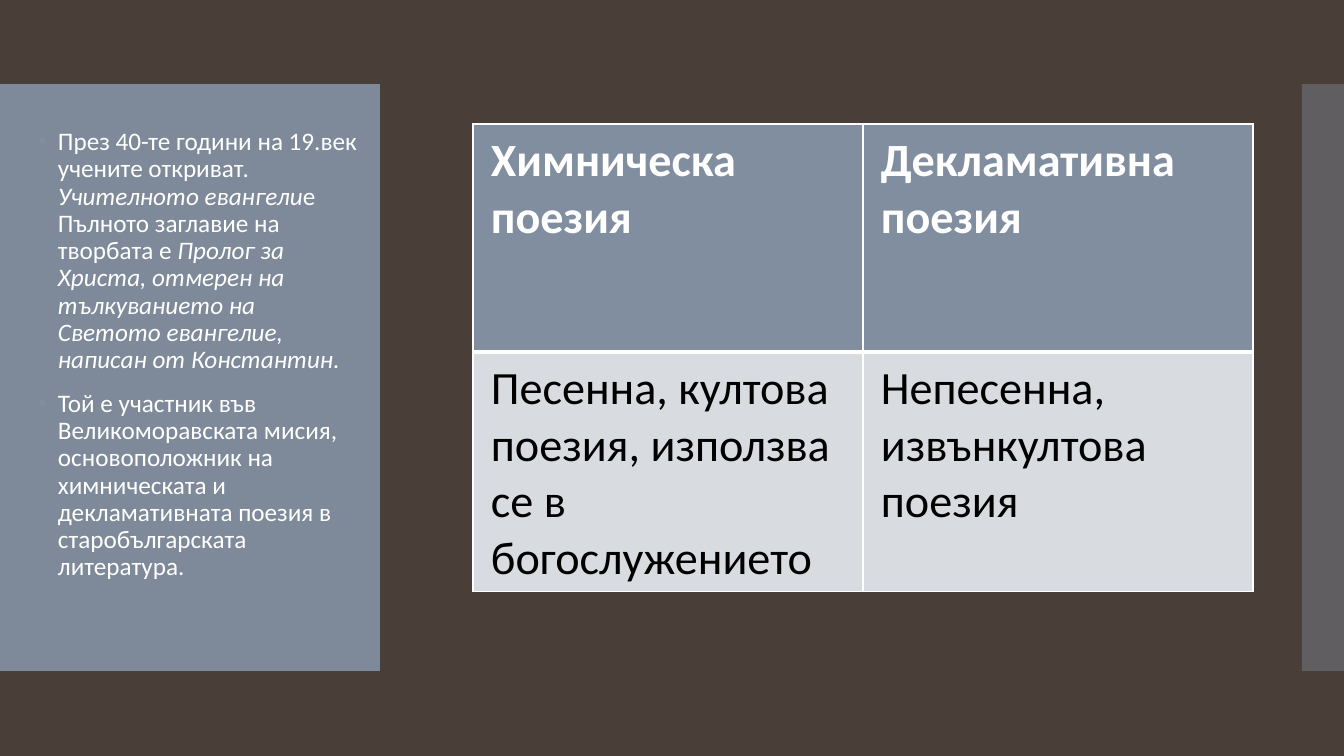
import pptx
import pptx.util
import pptx.dml.color
import pptx.enum.shapes
import pptx.oxml.ns
from lxml import etree

SCALE = 914400 / 100.8
FONT = "Calibri"
SLATE, PALE, WHITE, BLACK, BROWN = "818E9F", "D8DBDF", "FFFFFF", "000000", "4A3F38"
NOTES = [
    [("През 40-те години на 19.век учените откриват. ", False),
     ("Учителното евангели", True),
     ("е Пълното заглавие на творбата е ", False),
     ("Пролог за Христа, отмерен на тълкуванието на Светото евангелие, "
      "написан от Константин.", True)],
    [("Той е участник във Великоморавската мисия, основоположник на химническата "
      "и декламативната поезия в старобългарската литература.", False)],
]
ROWS = [
    ["Химническа поезия", "Декламативна поезия"],
    ["Песенна, култова поезия, използва се в богослужението",
     "Непесенна, извънкултова поезия"],
]


def px(n):
    return pptx.util.Emu(round(n * SCALE))


def place(box):
    return [px(n) for n in box]


def rgb(code):
    return pptx.dml.color.RGBColor.from_string(code)


def sub(node, tag, **attrs):
    return etree.SubElement(node, pptx.oxml.ns.qn(tag), **attrs)


def paint(fill, code):
    fill.solid()
    fill.fore_color.rgb = rgb(code)


def style(para, size, code, bold=False):
    font = para.font
    font.name, font.size, font.bold = FONT, pptx.util.Pt(size), bold
    font.color.rgb = rgb(code)


def add_band(slide, box, alpha):
    band = slide.shapes.add_shape(pptx.enum.shapes.MSO_SHAPE.RECTANGLE, *place(box))
    band.shadow.inherit = False
    band.line.fill.background()
    paint(band.fill, SLATE)
    tint = band.fill._xPr.find(".//" + pptx.oxml.ns.qn("a:srgbClr"))
    sub(tint, "a:alpha", val=str(alpha * 1000))


def add_bullet(para):
    props = para._p.get_or_add_pPr()
    props.set("marL", str(px(20)))
    props.set("indent", str(px(-20)))
    mark = sub(props, "a:buClr")
    sub(mark, "a:srgbClr", val=SLATE)
    sub(props, "a:buFont", typeface="Arial")
    sub(props, "a:buChar", char="•")


def add_notes(slide, box):
    left, top, width, height = box
    add_band(slide, box, 95)
    area = (left + 28, top + 40, width - 35, height - 60)
    frame = slide.shapes.add_textbox(*place(area)).text_frame
    frame.word_wrap = True
    for i, parts in enumerate(NOTES):
        para = frame.add_paragraph() if i else frame.paragraphs[0]
        para.line_spacing = 0.9
        para.space_before = pptx.util.Pt(12)
        add_bullet(para)
        style(para, 18, WHITE)
        for text, slant in parts:
            run = para.add_run()
            run.text = text
            run.font.italic = slant


def add_edge(cell, tag, points):
    edge = sub(cell._tc.get_or_add_tcPr(), tag, w=str(pptx.util.Pt(points)))
    sub(sub(edge, "a:solidFill"), "a:srgbClr", val=WHITE)


def add_grid(slide, box):
    rows, cols = len(ROWS), len(ROWS[0])
    table = slide.shapes.add_table(rows, cols, *place(box)).table
    for r, texts in enumerate(ROWS):
        head = r == 0
        for c, text in enumerate(texts):
            cell = table.cell(r, c)
            cell.text = text
            cell.margin_left = cell.margin_right = px(18)
            cell.margin_top = cell.margin_bottom = px(9)
            style(cell.text_frame.paragraphs[0], 33, WHITE if head else BLACK, head)
            add_edge(cell, "a:lnL", 1)
            add_edge(cell, "a:lnR", 1)
            add_edge(cell, "a:lnT", 1 if head else 3)
            add_edge(cell, "a:lnB", 3 if head else 1)
            paint(cell.fill, SLATE if head else PALE)


def main():
    deck = pptx.Presentation()
    deck.slide_width, deck.slide_height = px(1344), px(756)
    slide = deck.slides.add_slide(deck.slide_layouts[6])
    paint(slide.background.fill, BROWN)
    add_notes(slide, (0, 84, 380, 587))
    add_band(slide, (1302, 84, 42, 587), 40)
    add_grid(slide, (473, 124, 780, 456))
    deck.save("out.pptx")


if __name__ == "__main__":
    main()
